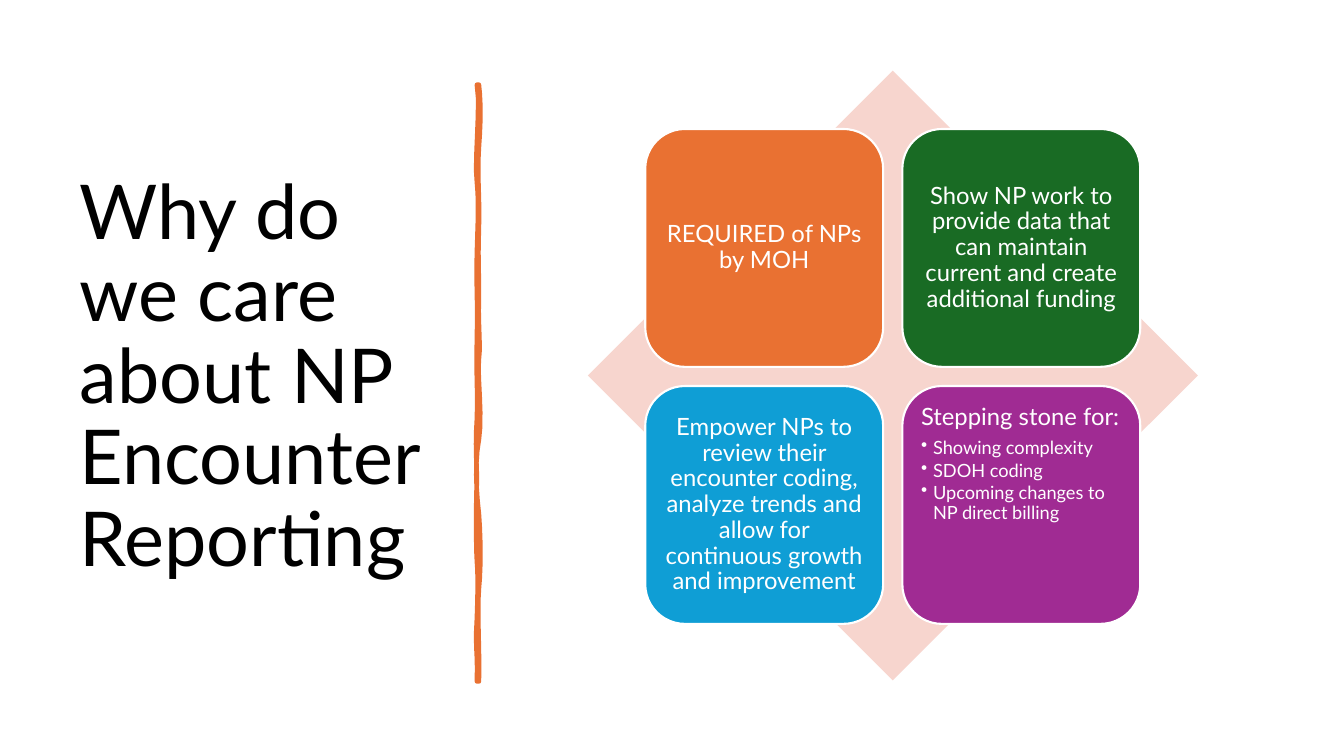
from dataclasses import dataclass

from lxml import etree
from pptx import Presentation
from pptx import util as u
from pptx.dml.color import RGBColor
from pptx.enum import shapes, text
from pptx.oxml.ns import qn

PX = 9144  # EMU, 100 px to the inch
FONT = "Lato"
BLACK = RGBColor(0x00, 0x00, 0x00)
WHITE = RGBColor(0xFF, 0xFF, 0xFF)
ORANGE = RGBColor(0xE9, 0x71, 0x32)
GREEN = RGBColor(0x19, 0x6B, 0x24)
BLUE = RGBColor(0x0F, 0x9E, 0xD5)
PURPLE = RGBColor(0xA0, 0x2B, 0x93)
PINK = RGBColor(0xF7, 0xD5, 0xCE)

CARD_LEFT, CARD_TOP, CARD_SIZE, CARD_STEP = 640, 128, 236, 255
CURVE_STEPS = 6

# The divider as px: a start, then cubic curves of two handles and an end.
DIVIDER_START = (475, 84)
DIVIDER_CURVES = [
    ((477, 102), (477, 119), (475, 146)),
    ((473, 173), (476, 195), (475, 226)),
    ((474, 257), (475, 262), (475, 294)),
    ((474, 325), (477, 342), (475, 356)),
    ((473, 370), (479, 414), (475, 436)),
    ((471, 457), (472, 484), (475, 510)),
    ((477, 536), (477, 564), (475, 584)),
    ((473, 603), (476, 650), (475, 676)),
    ((474, 676), (473, 676), (473, 676)),
    ((474, 646), (471, 644), (473, 613)),
    ((474, 583), (474, 570), (473, 557)),
    ((472, 544), (472, 495), (473, 477)),
    ((473, 459), (471, 445), (473, 415)),
    ((474, 386), (472, 373), (473, 335)),
    ((474, 298), (472, 281), (473, 250)),
    ((474, 218), (475, 200), (473, 181)),
    ((470, 163), (477, 104), (473, 84)),
]


@dataclass(frozen=True)
class Card:
    column: int
    row: int
    color: RGBColor
    heading: str
    bullets: tuple[str, ...] = ()


CARDS = [
    Card(0, 0, ORANGE, "REQUIRED of NPs by MOH"),
    Card(1, 0, GREEN, "Show NP work to provide data that can maintain "
                      "current and create additional funding"),
    Card(0, 1, BLUE, "Empower NPs to review their encounter coding, analyze "
                     "trends and allow for continuous growth and improvement"),
    Card(1, 1, PURPLE, "Stepping stone for: ",
         ("Showing complexity", "SDOH coding",
          "Upcoming changes to NP direct billing")),
]


def px(length: int) -> u.Emu:
    return u.Emu(length * PX)


def format_paragraph(para, size: float, color: RGBColor, align, after: float = 0) -> None:
    para.alignment = align
    para.line_spacing = 0.9
    para.space_after = u.Pt(after)
    para.font.name = FONT
    para.font.size = u.Pt(size)
    para.font.color.rgb = color


def add_bullet(para) -> None:
    properties = para._p.get_or_add_pPr()
    properties.set("marL", str(px(12)))
    properties.set("indent", str(-px(12)))
    etree.SubElement(properties, qn("a:buChar")).set("char", "•")


def add_title(page) -> None:
    title = page.shapes.title
    title.left, title.top, title.width, title.height = map(px, (69, 70, 374, 611))
    frame = title.text_frame
    frame.text = "Why do we care about NP Encounter Reporting"
    frame.word_wrap = True
    frame.auto_size = text.MSO_AUTO_SIZE.NONE
    frame.vertical_anchor = text.MSO_ANCHOR.MIDDLE
    format_paragraph(frame.paragraphs[0], 54, BLACK, text.PP_ALIGN.LEFT)


def divider_points() -> list[tuple[float, float]]:
    """Points along the curves of the divider, after its start."""
    points = []
    start = DIVIDER_START
    for first, second, end in DIVIDER_CURVES:
        for step in range(1, CURVE_STEPS + 1):
            t = step / CURVE_STEPS
            s = 1 - t
            weights = (s ** 3, 3 * s * s * t, 3 * s * t * t, t ** 3)
            corners = (start, first, second, end)
            x, y = (sum(w * c[axis] for w, c in zip(weights, corners))
                    for axis in (0, 1))
            points.append((x * PX, y * PX))
        start = end
    return points


def add_divider(page) -> None:
    builder = page.shapes.build_freeform(*map(px, DIVIDER_START), scale=1.0)
    builder.add_line_segments(divider_points(), close=True)
    divider = builder.convert_to_shape()
    divider.shadow.inherit = False
    divider.fill.solid()
    divider.fill.fore_color.rgb = ORANGE
    divider.line.color.rgb = ORANGE
    divider.line.width = u.Pt(3.25)
    etree.SubElement(divider.line._get_or_add_ln(), qn("a:round"))


def add_filled_shape(page, kind, left: int, top: int, size: int, color: RGBColor):
    shape = page.shapes.add_shape(kind, px(left), px(top), px(size), px(size))
    shape.shadow.inherit = False
    shape.fill.solid()
    shape.fill.fore_color.rgb = color
    shape.line.fill.background()
    return shape


def add_card(page, card: Card) -> None:
    box = add_filled_shape(page, shapes.MSO_SHAPE.ROUNDED_RECTANGLE,
                           CARD_LEFT + card.column * CARD_STEP,
                           CARD_TOP + card.row * CARD_STEP, CARD_SIZE, card.color)
    box.line.color.rgb = WHITE
    box.line.width = u.Pt(1.5)
    frame = box.text_frame
    frame.word_wrap = True
    frame.margin_left = frame.margin_right = px(7)
    frame.margin_top = frame.margin_bottom = px(7)
    listed = bool(card.bullets)
    frame.vertical_anchor = text.MSO_ANCHOR.TOP if listed else text.MSO_ANCHOR.MIDDLE
    align = text.PP_ALIGN.LEFT if listed else text.PP_ALIGN.CENTER
    heading = frame.paragraphs[0]
    heading.text = card.heading
    format_paragraph(heading, 17, WHITE, align, after=6)
    for bullet in card.bullets:
        para = frame.add_paragraph()
        para.text = bullet
        para.level = 1
        format_paragraph(para, 13, WHITE, align, after=2)
        add_bullet(para)


def main() -> None:
    deck = Presentation()
    deck.slide_width, deck.slide_height = px(1333), px(750)
    page = deck.slides.add_slide(deck.slide_layouts.get_by_name("Title Only"))
    add_title(page)
    add_divider(page)
    add_filled_shape(page, shapes.MSO_SHAPE.DIAMOND, 583, 70, 605, PINK)
    for card in CARDS:
        add_card(page, card)
    deck.save("out.pptx")


if __name__ == "__main__":
    main()
